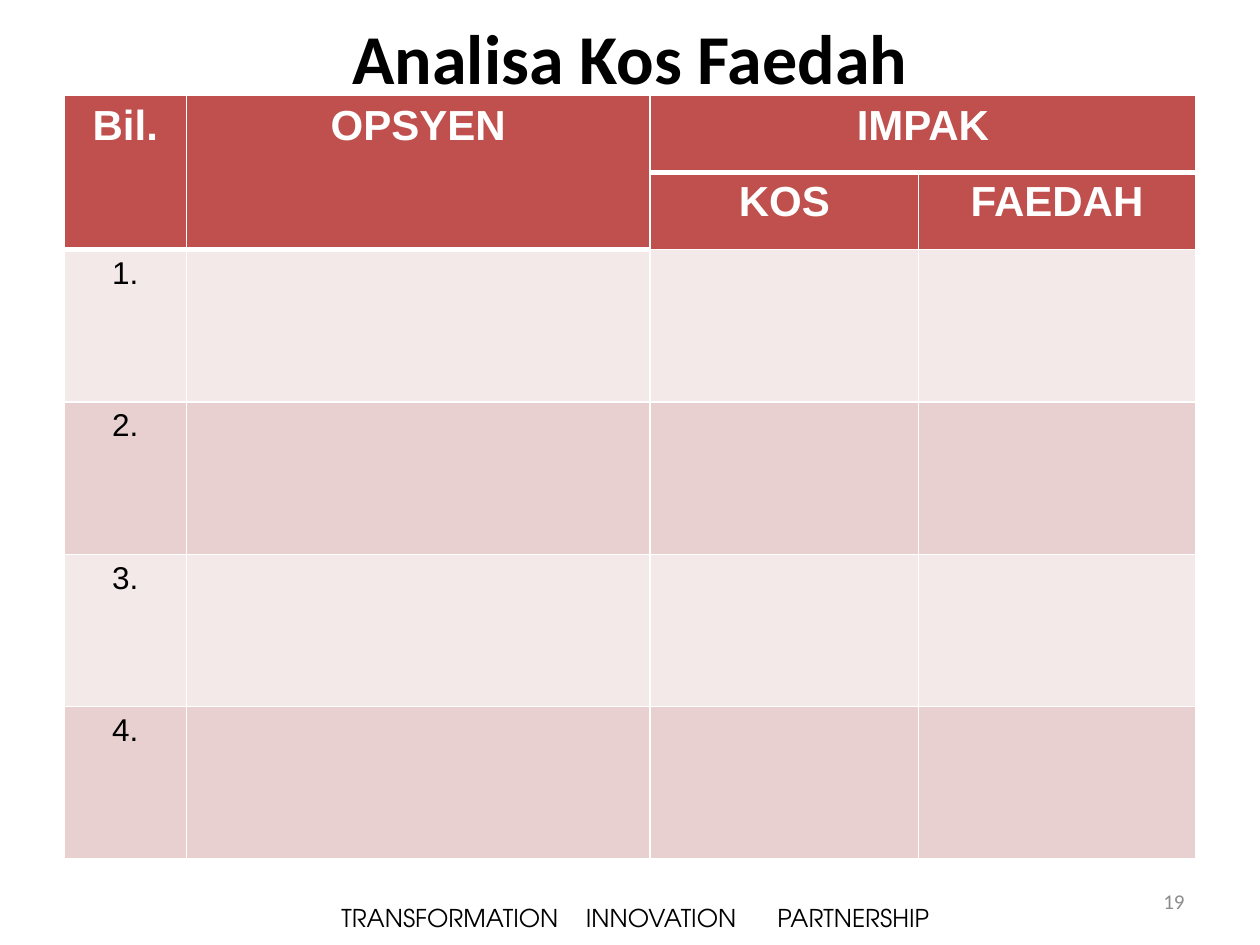
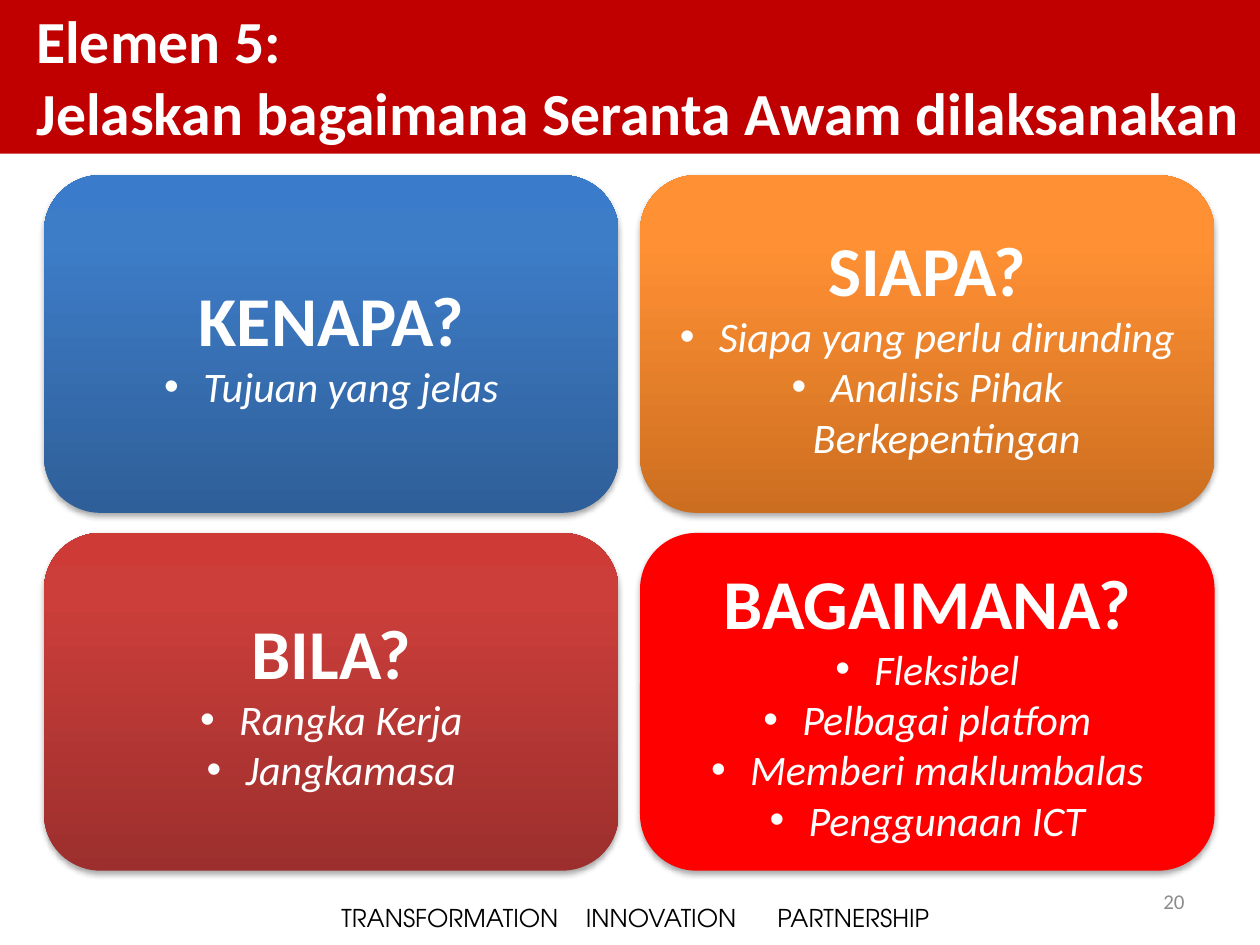
from copy import deepcopy

from lxml import etree
from pptx import Presentation
from pptx.dml.color import RGBColor
from pptx.enum.shapes import MSO_SHAPE
from pptx.enum.text import MSO_ANCHOR, PP_ALIGN
from pptx.oxml.ns import qn
from pptx.util import Inches, Pt

RECT, ROUND_RECT = MSO_SHAPE.RECTANGLE, MSO_SHAPE.ROUNDED_RECTANGLE
LEFT, CENTER, RIGHT = PP_ALIGN.LEFT, PP_ALIGN.CENTER, PP_ALIGN.RIGHT
TOP, MIDDLE, BOTTOM = MSO_ANCHOR.TOP, MSO_ANCHOR.MIDDLE, MSO_ANCHOR.BOTTOM

BLACK = RGBColor(0x00, 0x00, 0x00)
WHITE = RGBColor(0xFF, 0xFF, 0xFF)
GREY = RGBColor(0x8C, 0x8C, 0x8C)
BAND_RED = RGBColor(0xC0, 0x00, 0x00)
BRIGHT_RED = RGBColor(0xFF, 0x00, 0x00)
HEADER_RED = RGBColor(0xC0, 0x50, 0x4D)
ROW_LIGHT = RGBColor(0xF4, 0xE9, 0xE9)
ROW_DARK = RGBColor(0xE8, 0xD0, 0xD0)
BLUES = [RGBColor(0x2F, 0x5F, 0x99), RGBColor(0x3D, 0x7C, 0xC7), RGBColor(0x3A, 0x7C, 0xCB)]
ORANGES = [RGBColor(0xCC, 0x6E, 0x20), RGBColor(0xFF, 0x90, 0x34), RGBColor(0xFF, 0x91, 0x36)]
REDS = [RGBColor(0x9C, 0x2F, 0x2D), RGBColor(0xCB, 0x3E, 0x3A), RGBColor(0xCE, 0x3B, 0x37)]
STOPS = [0, 0.8, 1]

TITLE = {"name": "Calibri", "size": Pt(40), "bold": True}
BAND_TITLE = {"name": "Calibri", "size": Pt(34.1), "bold": True}
BULLET = {"name": "Calibri", "size": Pt(24), "italic": True}
NUMBER = {"name": "Calibri", "size": Pt(12)}
FOOTER = {"name": "TeX Gyre Adventor", "size": Pt(14)}
TABLE_HEAD = {"name": "Arial", "size": Pt(24), "bold": True}
TABLE_BODY = {"name": "Arial", "size": Pt(18), "bold": False}

COLUMNS = [0.97, 3.68, 2.13, 2.2]
ROWS = [0.61] * 2 + [1.21] * 4
CELLS = [["Bil.", "OPSYEN", "IMPAK", ""], ["", "", "KOS", "FAEDAH"]]
CELLS += [[f"{n}.", "", "", ""] for n in range(1, 5)]

CARDS = [
    ("KENAPA?", ["Tujuan yang jelas"], BLUES),
    ("SIAPA?", ["Siapa yang perlu dirunding", "Analisis Pihak Berkepentingan"], ORANGES),
    ("BILA?", ["Rangka Kerja", "Jangkamasa"], REDS),
    ("BAGAIMANA?", ["Fleksibel", "Pelbagai platfom", "Memberi maklumbalas",
                    "Penggunaan ICT"], BRIGHT_RED),
]


def add_child(parent, tag, **attrs):
    child = etree.SubElement(parent, qn(tag))
    for key, value in attrs.items():
        child.set(key, str(value))
    return child


def write(p, text, style, color, align=LEFT):
    p.alignment = align
    r = p.add_run()
    r.text = text
    for key, value in style.items():
        setattr(r.font, key, value)
    r.font.color.rgb = color


def next_paragraph(tf, index):
    return tf.paragraphs[0] if index == 0 else tf.add_paragraph()


def indent(p, left, first=0.0):
    pPr = p._p.get_or_add_pPr()
    pPr.set("marL", str(Inches(left)))
    pPr.set("indent", str(Inches(first)))
    return pPr


def add_text(s, box, text, style, color, align, anchor=TOP):
    tf = s.shapes.add_textbox(*map(Inches, box)).text_frame
    tf.word_wrap = True
    tf.vertical_anchor = anchor
    write(tf.paragraphs[0], text, style, color, align)
    return tf


def add_box(s, kind, box, anchor):
    sp = s.shapes.add_shape(kind, *map(Inches, box))
    sp.shadow.inherit = False
    sp.line.fill.background()
    sp.text_frame.word_wrap = True
    sp.text_frame.vertical_anchor = anchor
    return sp


def fill_solid(target, color):
    target.fill.solid()
    target.fill.fore_color.rgb = color


def fill_gradient(sp, colors):
    sp.fill.gradient()
    sp.fill.gradient_angle = 90
    gs_list = sp._element.spPr.find(".//" + qn("a:gsLst"))
    gs_list.append(deepcopy(gs_list[0]))
    for stop, position, color in zip(sp.fill.gradient_stops, STOPS, colors):
        stop.position = position
        stop.color.rgb = color


def add_shadow(sp):
    effects = sp._element.spPr.find(qn("a:effectLst"))
    shadow = add_child(effects, "a:outerShdw", blurRad=Pt(3.1), dist=Pt(1.8),
                       dir=5400000, rotWithShape=0)
    add_child(add_child(shadow, "a:srgbClr", val=BLACK), "a:alpha", val=35000)


def add_footer(s, number):
    tf = add_text(s, (2.18, 7.12, 5.74, 0.34), "TRANSFORMATION\tINNOVATION\tPARTNERSHIP",
                  FOOTER, BLACK, LEFT)
    tf.margin_left = Inches(0.53)
    tabs = add_child(tf.paragraphs[0]._p.get_or_add_pPr(), "a:tabLst")
    for position in (1.94, 3.46):
        add_child(tabs, "a:tab", pos=Inches(position), algn="l")
    add_text(s, (7.17, 6.95, 2.33, 0.4), str(number), NUMBER, GREY, RIGHT, MIDDLE)


def add_band(s, lines):
    band = add_box(s, RECT, (0, -0.03, 10, 1.25), BOTTOM)
    fill_solid(band, BAND_RED)
    for i, line in enumerate(lines):
        p = next_paragraph(band.text_frame, i)
        indent(p, 0.19)
        write(p, line, BAND_TITLE, WHITE)


def add_card(s, index, heading, bullets, paint):
    row, col = divmod(index, 2)
    card = add_box(s, ROUND_RECT, (0.35 + 4.73 * col, 1.39 + 2.84 * row, 4.56, 2.68), MIDDLE)
    if isinstance(paint, list):
        fill_gradient(card, paint)
    else:
        fill_solid(card, paint)
    add_shadow(card)
    tf = card.text_frame
    write(tf.paragraphs[0], heading, TITLE, WHITE, CENTER)
    for text in bullets:
        p = tf.add_paragraph()
        pPr = indent(p, 0.31, -0.31)
        add_child(pPr, "a:buFont", typeface="Arial")
        add_child(pPr, "a:buChar", char="•")
        write(p, text, BULLET, WHITE, CENTER)


def has_thick_base(row, col):
    return row == 0 or (row == 1 and col < 2)


def set_borders(cell, row, col):
    tcPr = cell._tc.get_or_add_tcPr()
    widths = {"L": 1, "R": 1,
              "T": 3 if has_thick_base(row - 1, col) else 1,
              "B": 3 if has_thick_base(row, col) else 1}
    for side, width in widths.items():
        ln = add_child(tcPr, f"a:ln{side}", w=Pt(width))
        add_child(add_child(ln, "a:solidFill"), "a:srgbClr", val=WHITE)


def add_cost_table(s):
    frame = s.shapes.add_table(len(ROWS), len(COLUMNS), Inches(0.51), Inches(0.76),
                               Inches(sum(COLUMNS)), Inches(sum(ROWS)))
    table = frame.table
    table.first_row = table.horz_banding = False
    for column, width in zip(table.columns, COLUMNS):
        column.width = Inches(width)
    for row, height in zip(table.rows, ROWS):
        row.height = Inches(height)
    for first, last in (((0, 0), (1, 0)), ((0, 1), (1, 1)), ((0, 2), (0, 3))):
        table.cell(*first).merge(table.cell(*last))
    for r, texts in enumerate(CELLS):
        header = r < 2
        color = HEADER_RED if header else (ROW_DARK if r % 2 else ROW_LIGHT)
        for c, text in enumerate(texts):
            cell = table.cell(r, c)
            set_borders(cell, r, c)
            fill_solid(cell, color)
            if text:
                write(cell.text_frame.paragraphs[0], text,
                      TABLE_HEAD if header else TABLE_BODY,
                      WHITE if header else BLACK, CENTER)


def main():
    prs = Presentation()
    prs.slide_width, prs.slide_height = Inches(10), Inches(7.5)
    blank = prs.slide_layouts[6]

    s = prs.slides.add_slide(blank)
    add_text(s, (0.5, 0.05, 9, 0.79), "Analisa Kos Faedah", TITLE, BLACK, CENTER, MIDDLE)
    add_cost_table(s)
    add_footer(s, 19)

    s = prs.slides.add_slide(blank)
    add_band(s, ["Elemen 5:", "Jelaskan bagaimana Seranta Awam dilaksanakan"])
    for i, card in enumerate(CARDS):
        add_card(s, i, *card)
    add_footer(s, 20)

    prs.save("out.pptx")


if __name__ == "__main__":
    main()
